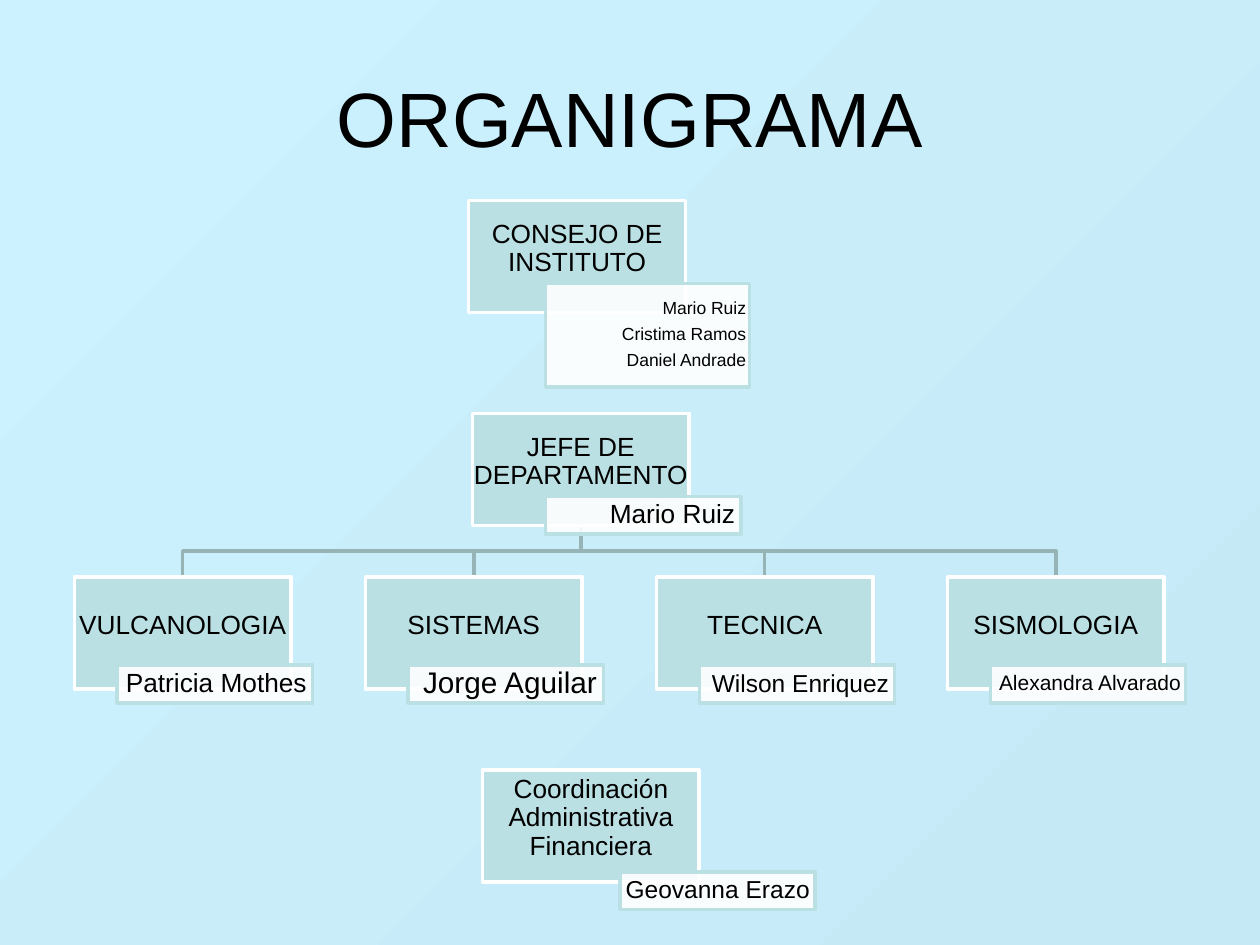
"""Build the organisation chart slide of a volcanology and seismology institute."""
from lxml import etree
from pptx import Presentation
from pptx.dml.color import RGBColor
from pptx.enum.shapes import MSO_SHAPE
from pptx.enum.text import MSO_ANCHOR, PP_ALIGN
from pptx.oxml.ns import qn
from pptx.util import Inches, Pt

RECT = MSO_SHAPE.RECTANGLE
MIDDLE = MSO_ANCHOR.MIDDLE
CENTER, RIGHT = PP_ALIGN.CENTER, PP_ALIGN.RIGHT

BLACK = RGBColor(0x00, 0x00, 0x00)
WHITE = RGBColor(0xFF, 0xFF, 0xFF)
TEAL = RGBColor(0xBB, 0xE0, 0xE3)
LINK = RGBColor(0x96, 0xB3, 0xB6)
SKY = (RGBColor(0xCD, 0xF2, 0xFF), RGBColor(0xC5, 0xE9, 0xF5))

FONT = "Arial"
TITLE = "ORGANIGRAMA"
BOX_W, BOX_H, BOX_SIZE = 1.72, 0.89, 15
TAG_W, TAG_H = 1.55, 0.3
TAG_DX, TAG_DY = 0.34, 0.7
ROW_X, ROW_Y, ROW_STEP = 0.59, 4.58, 2.31
HEAD_X, HEAD_Y = 3.75, 3.28

UNITS = [
    ("VULCANOLOGIA", "Patricia Mothes", 15),
    ("SISTEMAS", "Jorge Aguilar", 17),
    ("TECNICA", "Wilson Enriquez", 14),
    ("SISMOLOGIA", "Alexandra Alvarado", 12),
]
NODES = [
    ("CONSEJO DE INSTITUTO", (3.72, 1.59),
     "Mario Ruiz\nCristima Ramos\nDaniel Andrade", 10, (4.33, 2.25, 1.62, 0.82)),
    ("JEFE DE DEPARTAMENTO", (HEAD_X, HEAD_Y),
     "Mario Ruiz", 15, (4.33, 3.94, TAG_W, TAG_H)),
    ("Coordinación Administrativa Financiera", (3.83, 6.11),
     "Geovanna Erazo", 14, (4.92, 6.92, TAG_W, TAG_H)),
]
for i, (unit, person, size) in enumerate(UNITS):
    x = ROW_X + i * ROW_STEP
    NODES.append((unit, (x, ROW_Y), person, size,
                  (x + TAG_DX, ROW_Y + TAG_DY, TAG_W, TAG_H)))


def write(s, text, size, align, insets=(0, 0, 0, 0), spacing=1.0):
    tf = s.text_frame
    tf.text = text
    tf.word_wrap = True
    tf.vertical_anchor = MIDDLE
    tf.margin_left, tf.margin_top, tf.margin_right, tf.margin_bottom = map(Inches, insets)
    for i, p in enumerate(tf.paragraphs):
        p.alignment = align
        p.line_spacing = spacing
        p.space_after = Pt(0.4 * size if i < len(tf.paragraphs) - 1 else 0)
        p.font.name, p.font.size = FONT, Pt(size)
        p.font.color.rgb = BLACK


def add_rect(slide, area, fill, line):
    s = slide.shapes.add_shape(RECT, *map(Inches, area))
    s.shadow.inherit = False
    s.fill.solid()
    s.fill.fore_color.rgb = fill
    s.line.color.rgb = line
    s.line.width = Pt(2)
    return s


def add_node(slide, name, pos, people, size, tag_area):
    box = add_rect(slide, (*pos, BOX_W, BOX_H), TEAL, WHITE)
    write(box, name, BOX_SIZE, CENTER, (0, 0.01, 0, 0.13), 0.9)
    tag = add_rect(slide, tag_area, WHITE, TEAL)
    color = tag.fill._xPr.find(qn("a:solidFill"))[0]
    etree.SubElement(color, qn("a:alpha"), val="90000")
    write(tag, people, size, RIGHT, (0, 0.01, 0.003 * size, 0.01), 0.9)


def add_link(slide, x):
    x0, y0 = HEAD_X + BOX_W / 2, HEAD_Y + BOX_H
    mid = (y0 + ROW_Y) / 2
    fb = slide.shapes.build_freeform(Inches(x0), Inches(y0))
    corners = [(x0, mid), (x, mid), (x, ROW_Y)]
    fb.add_line_segments([(Inches(a), Inches(b)) for a, b in corners], close=False)
    s = fb.convert_to_shape()
    s.shadow.inherit = False
    s.fill.background()
    s.line.color.rgb = LINK
    s.line.width = Pt(2)


def main():
    prs = Presentation()
    prs.slide_width, prs.slide_height = Inches(10), Inches(7.5)
    slide = prs.slides.add_slide(prs.slide_layouts[6])

    fill = slide.background.fill
    fill.gradient()
    fill.gradient_angle = 315
    for stop, color, position in zip(fill.gradient_stops, SKY, (0, 1)):
        stop.color.rgb = color
        stop.position = position

    title = slide.shapes.add_textbox(*map(Inches, (0.5, 0.3, 9, 1.25)))
    write(title, TITLE, 44, CENTER)

    for i in reversed(range(len(UNITS))):
        add_link(slide, ROW_X + i * ROW_STEP + BOX_W / 2)
    for node in NODES:
        add_node(slide, *node)

    prs.save("out.pptx")


if __name__ == "__main__":
    main()
